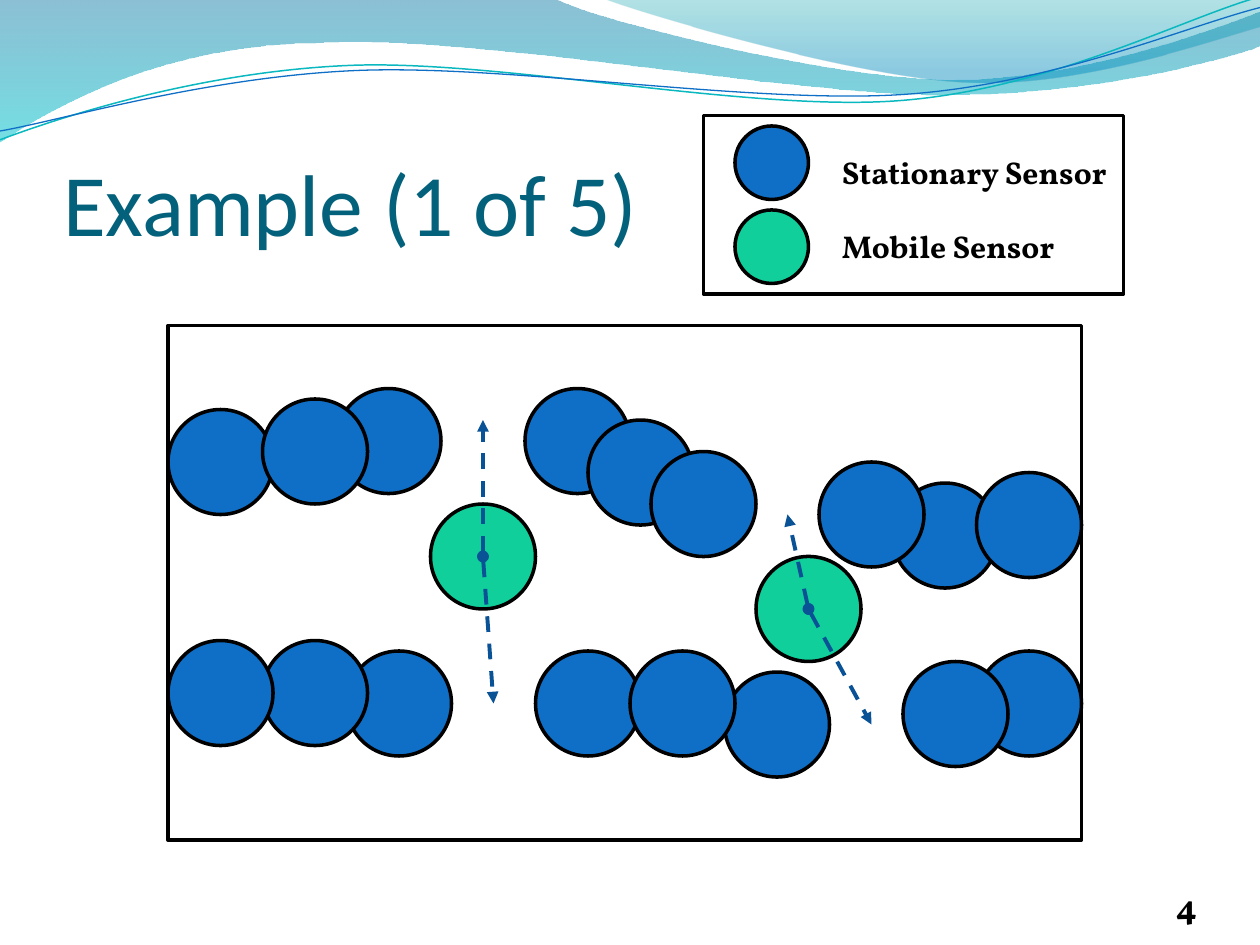
from typing import NamedTuple

from lxml import etree
from pptx import Presentation
from pptx.dml.color import RGBColor
from pptx.enum.dml import MSO_LINE
from pptx.enum.shapes import MSO_CONNECTOR, MSO_SHAPE
from pptx.enum.text import MSO_ANCHOR, PP_ALIGN
from pptx.oxml.ns import qn
from pptx.util import Emu, Inches, Pt

DASH = MSO_LINE.DASH
STRAIGHT = MSO_CONNECTOR.STRAIGHT
OVAL, RECTANGLE = MSO_SHAPE.OVAL, MSO_SHAPE.RECTANGLE
BOTTOM, TOP = MSO_ANCHOR.BOTTOM, MSO_ANCHOR.TOP
LEFT, RIGHT = PP_ALIGN.LEFT, PP_ALIGN.RIGHT

BLACK = RGBColor(0x00, 0x00, 0x00)
WHITE = RGBColor(0xFF, 0xFF, 0xFF)
STATIONARY = RGBColor(0x0F, 0x6F, 0xC6)
MOBILE = RGBColor(0x10, 0xCF, 0x9B)
ARROW = RGBColor(0x09, 0x52, 0x95)
TITLE = RGBColor(0x04, 0x61, 0x7B)
TEAL_LINE = RGBColor(0x0A, 0xB8, 0xBF)

Point = tuple[float, float]
CELL = Inches(1) // 12  # the slide is a grid of 120 columns by 90 rows
SENSOR_SIZE, KEY_SIZE = 10, 7


class GradientStop(NamedTuple):
    position: float
    color: RGBColor
    opacity: int


class Band(NamedTuple):
    outline: list[list[Point]]
    stops: list[GradientStop]


class Wave(NamedTuple):
    outline: list[list[Point]]
    color: RGBColor
    width: float


class Mobile(NamedTuple):
    column: float
    row: float
    targets: list[Point]


class Key(NamedTuple):
    label: str
    color: RGBColor
    circle_row: float
    label_row: float


# Each outline starts with a point; then one point is a line, three are a Bézier curve (inches).
BANDS = [
    Band([[(0, -0.01)], [(4.4, -0.01)],
          [(4.76, 0.17), (6.64, 0.63), (7.58, 0.63)],
          [(8.53, 0.63), (9.58, 0.26), (10, 0.09)], [(10.01, 0.36)],
          [(9.83, 0.44), (8.7, 0.76), (7.46, 0.75)],
          [(6.22, 0.75), (3.82, 0.28), (2.57, 0.34)],
          [(1.29, 0.35), (0.46, 0.83), (-0.01, 1.13)]],
         [GradientStop(0, RGBColor(0x00, 0x74, 0xA1), 45),
          GradientStop(1, RGBColor(0x00, 0xC6, 0xCF), 55)]),
    Band([[(4.79, -0.01)],
          [(5.09, 0.11), (6.82, 0.62), (7.69, 0.65)],
          [(8.56, 0.69), (9.61, 0.32), (10, 0.21)], [(10, 0)]],
         [GradientStop(0, RGBColor(0x00, 0xA1, 0xA9), 30),
          GradientStop(0.8, RGBColor(0x00, 0x8B, 0xBF), 45)]),
]
WAVES = [
    Wave([[(0, 1.11)],
          [(0.48, 0.93), (1.58, 0.57), (2.77, 0.52)],
          [(3.95, 0.47), (5.93, 0.89), (7.13, 0.8)],
          [(8.33, 0.71), (9.38, 0.15), (9.98, -0.02)]], TEAL_LINE, 0.85),
    Wave([[(0, 1.04)],
          [(0.47, 0.96), (1.64, 0.61), (2.83, 0.56)],
          [(4.03, 0.51), (5.97, 0.83), (7.17, 0.75)],
          [(8.36, 0.67), (9.41, 0.21), (10, 0.06)]], STATIONARY, 0.75),
]
STATIONARY_CELLS = [
    (16, 39), (50, 37), (32, 37), (25, 38), (56, 40), (62, 43),
    (85, 46), (78, 44), (93, 45),
    (51, 62), (33, 62), (25, 61), (16, 61), (69, 64), (60, 62),
    (93, 62), (86, 63),
]
MOBILES = [
    Mobile(72, 53, [(75, 49), (83, 69)]),
    Mobile(41, 48, [(46, 40), (47, 67)]),
]
KEYS = [
    Key("Stationary Sensor", STATIONARY, 12, 14),
    Key("Mobile Sensor", MOBILE, 20, 21),
]


def cells(*counts: float) -> list[Emu]:
    return [Emu(round(count * CELL)) for count in counts]


def add_outline(shapes, outline: list[list[Point]], close: bool):
    """Draw straight steps through all points, then join each group of three into a curve."""
    start, *points = [(Inches(x), Inches(y)) for segment in outline for x, y in segment]
    builder = shapes.build_freeform(*start)
    builder.add_line_segments(points, close=close)
    shape = builder.convert_to_shape()
    shape.shadow.inherit = False
    steps = iter(list(shape._element.spPr.iter(qn("a:lnTo"))))
    for segment in outline[1:]:
        curve, *others = [next(steps) for _ in segment]
        if others:
            curve.tag = qn("a:cubicBezTo")
        for other in others:
            curve.append(other[0])
            other.getparent().remove(other)
    return shape


def add_band(shapes, band: Band) -> None:
    shape = add_outline(shapes, band.outline, close=True)
    shape.line.fill.background()
    shape.fill.gradient()
    shape.fill.gradient_angle = 270
    for gradient_stop, stop in zip(shape.fill.gradient_stops, band.stops):
        gradient_stop.position = stop.position
        gradient_stop.color.rgb = stop.color
    for color, stop in zip(shape._element.spPr.iter(qn("a:srgbClr")), band.stops):
        etree.SubElement(color, qn("a:alpha"), val=str(stop.opacity * 1000))


def add_wave(shapes, wave: Wave) -> None:
    shape = add_outline(shapes, wave.outline, close=False)
    shape.fill.background()
    shape.line.color.rgb = wave.color
    shape.line.width = Pt(wave.width)


def add_figure(shapes, kind, column: float, row: float, width: float, height: float,
               color: RGBColor) -> None:
    shape = shapes.add_shape(kind, *cells(column, row, width, height))
    shape.shadow.inherit = False
    shape.fill.solid()
    shape.fill.fore_color.rgb = color
    shape.line.color.rgb = BLACK
    shape.line.width = Pt(2)


def add_path_arrow(shapes, start: Point, end: Point) -> None:
    arrow = shapes.add_connector(STRAIGHT, *cells(*start, *end))
    arrow.line.color.rgb = ARROW
    arrow.line.width = Pt(2.25)
    arrow.line.dash_style = DASH
    line = arrow.line._get_or_add_ln()
    etree.SubElement(line, qn("a:headEnd"), type="oval")
    etree.SubElement(line, qn("a:tailEnd"), type="triangle")
    etree.SubElement(arrow._element.spPr, qn("a:effectLst"))


def write(frame, text: str, font: str, size: float, color: RGBColor, bold: bool,
          align=LEFT, anchor=TOP) -> None:
    frame.word_wrap = True
    frame.vertical_anchor = anchor
    paragraph = frame.paragraphs[0]
    paragraph.alignment = align
    run = paragraph.add_run()
    run.text = text
    run.font.name, run.font.size, run.font.bold = font, Pt(size), bold
    run.font.color.rgb = color


def set_margins(frame, top: float) -> None:
    frame.margin_left = frame.margin_right = frame.margin_bottom = 0
    frame.margin_top = Inches(top)


def main() -> None:
    deck = Presentation()
    deck.slide_width, deck.slide_height = cells(120, 90)
    slide = deck.slides.add_slide(deck.slide_layouts[5])
    shapes = slide.shapes

    for band in BANDS:
        add_band(shapes, band)
    for wave in WAVES:
        add_wave(shapes, wave)

    title = shapes.title
    title.left, title.top, title.width, title.height = cells(6, 9.24, 108, 15)
    set_margins(title.text_frame, top=0.05)
    write(title.text_frame, "Example (1 of 5)", "Calibri", 50, TITLE, False, anchor=BOTTOM)

    add_figure(shapes, RECTANGLE, 16, 31, 87, 49, WHITE)
    for column, row in STATIONARY_CELLS:
        add_figure(shapes, OVAL, column, row, SENSOR_SIZE, SENSOR_SIZE, STATIONARY)
    for mobile in MOBILES:
        add_figure(shapes, OVAL, mobile.column, mobile.row, SENSOR_SIZE, SENSOR_SIZE, MOBILE)
        center = (mobile.column + SENSOR_SIZE / 2, mobile.row + SENSOR_SIZE / 2)
        for target in mobile.targets:
            add_path_arrow(shapes, center, target)

    add_figure(shapes, RECTANGLE, 67, 11, 40, 17, WHITE)
    for key in KEYS:
        add_figure(shapes, OVAL, 70, key.circle_row, KEY_SIZE, KEY_SIZE, key.color)
        label = shapes.add_textbox(*cells(79, key.label_row, 28, 4.8))
        write(label.text_frame, key.label, "Vollkorn", 18, BLACK, True)

    page_number = shapes.add_textbox(*cells(104, 83.4, 10, 4.8))
    set_margins(page_number.text_frame, top=0)
    write(page_number.text_frame, "4", "Vollkorn", 20, BLACK, True, RIGHT, BOTTOM)

    deck.save("out.pptx")


if __name__ == "__main__":
    main()
